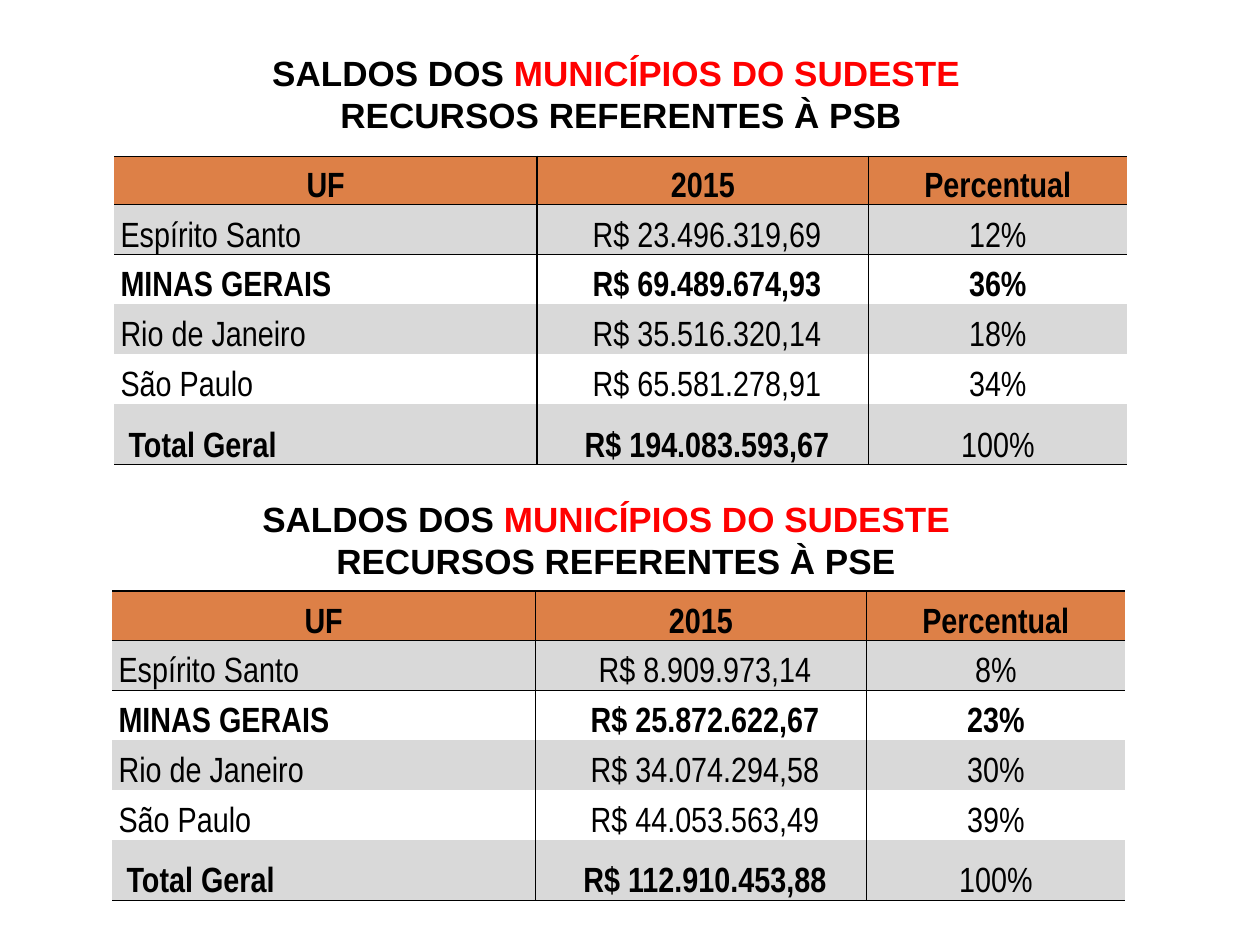
from dataclasses import dataclass

from lxml.etree import SubElement as Sub
from pptx import Presentation
from pptx.dml.color import RGBColor as RGB
from pptx.enum.text import MSO_ANCHOR as Anchor, MSO_AUTO_SIZE as Fit, PP_ALIGN as Align
from pptx.oxml.ns import qn
from pptx.util import Cm, Pt


@dataclass(frozen=True)
class Theme:
    ink: str = "000000"
    red: str = "FF0000"
    head: str = "DD8047"
    band: str = "D9D9D9"
    face: str = "Arial"
    slim: str = "Arial Narrow"
    size: float = 20
    line: float = 1
    plain: str = "{2D5ABB26-0587-4C30-8999-92F81FD0307C}"


@dataclass(frozen=True)
class Title:
    left: float
    top: float
    lead: str
    focus: str
    below: str


@dataclass(frozen=True)
class Grid:
    left: float
    top: float
    highs: list[float]
    sums: list[str]
    rates: list[str]


THEME = Theme()
WIDTHS = (8.53, 6.68, 5.21)
STATES = ("Espírito Santo", "MINAS GERAIS", "Rio de Janeiro", "São Paulo", " Total Geral")
HEADS = ("UF", "2015", "Percentual")

TITLES = (
    Title(5.18, 0.91, "SALDOS DOS", " MUNICÍPIOS DO SUDESTE ",
          "RECURSOS REFERENTES À PSB"),
    Title(4.98, 9.91, "SALDOS DOS ", "MUNICÍPIOS DO SUDESTE ",
          " RECURSOS REFERENTES À PSE"),
)
GRIDS = (
    Grid(2.3, 3.15, [0.76] + [0.79] * 4 + [1.22],
         ["23.496.319,69", "69.489.674,93", "35.516.320,14", "65.581.278,91",
          "194.083.593,67"],
         ["12%", "36%", "18%", "34%", "100%"]),
    Grid(2.26, 11.91, [1] * 5 + [1.22],
         ["8.909.973,14", "25.872.622,67", "34.074.294,58", "44.053.563,49",
          "112.910.453,88"],
         ["8%", "23%", "30%", "39%", "100%"]),
)


def style(run, face: str, color: str, bold: bool) -> None:
    font = run.font
    font.name, font.size, font.bold = face, Pt(THEME.size), bold
    font.color.rgb = RGB.from_string(color)


def edge(cell, sides: str) -> None:
    """Rule the given sides, named by L, R, T and B."""
    props = cell._tc.get_or_add_tcPr()
    for side in sides:
        line = Sub(props, qn(f"a:ln{side}"), w=str(Pt(THEME.line)))
        fill = Sub(line, qn("a:solidFill"))
        Sub(fill, qn("a:srgbClr"), val=THEME.ink)


def draw_title(slide, title: Title) -> None:
    box = slide.shapes.add_textbox(Cm(title.left), Cm(title.top), Cm(14.68), Cm(1.96))
    frame = box.text_frame
    frame.word_wrap = False
    frame.auto_size = Fit.SHAPE_TO_FIT_TEXT
    first, last = frame.paragraphs[0], frame.add_paragraph()
    first.alignment = last.alignment = Align.CENTER
    for text, color in ((title.lead, THEME.ink), (title.focus, THEME.red)):
        run = first.add_run()
        run.text = text
        style(run, THEME.face, color, True)
    last.text = title.below
    style(last.runs[0], THEME.face, THEME.ink, True)


def draw_cell(cell, text: str, row: int, col: int, end: int) -> None:
    # Margins: tight around the rates of single states
    side, top = (0.03, 0.03) if col == 2 and 0 < row < end else (0.13, 0)
    cell.margin_left = cell.margin_right = Cm(side)
    cell.margin_top, cell.margin_bottom = Cm(top), 0
    cell.vertical_anchor = Anchor.BOTTOM

    # Text
    para = cell.text_frame.paragraphs[0]
    para.text = text
    para.line_spacing = 1.15
    para.alignment = Align.LEFT if col == 0 and row else Align.CENTER
    bold = row in (0, 2) or (row == end and col < 2)
    style(para.runs[0], THEME.slim, THEME.ink, bold)

    # Rules between columns, around the head and under the total
    edge(cell, ("L" if col else "") + ("R" if col < 2 else "")
         + ("T" if row < 2 else "") + ("B" if row in (0, end) else ""))

    # Banded fill
    if row and row % 2 == 0:
        cell.fill.background()
    else:
        cell.fill.solid()
        cell.fill.fore_color.rgb = RGB.from_string(THEME.band if row else THEME.head)


def draw_grid(slide, grid: Grid) -> None:
    sums = [f" R$ {value}" for value in grid.sums]
    rows = [HEADS, *zip(STATES, sums, grid.rates)]
    table = slide.shapes.add_table(
        len(rows), len(HEADS), Cm(grid.left), Cm(grid.top),
        Cm(sum(WIDTHS)), Cm(sum(grid.highs))).table
    table.first_row = table.horz_banding = False
    table._tbl.tblPr.find(qn("a:tableStyleId")).text = THEME.plain
    for column, width in zip(table.columns, WIDTHS):
        column.width = Cm(width)
    for r, (texts, high) in enumerate(zip(rows, grid.highs)):
        table.rows[r].height = Cm(high)
        for c, text in enumerate(texts):
            draw_cell(table.cell(r, c), text, r, c, len(rows) - 1)


def main() -> None:
    deck = Presentation()
    deck.slide_width, deck.slide_height = Cm(25.4), Cm(19.05)
    slide = deck.slides.add_slide(deck.slide_layouts[6])
    for title, grid in zip(TITLES, GRIDS):
        draw_title(slide, title)
        draw_grid(slide, grid)
    deck.save("out.pptx")


if __name__ == "__main__":
    main()
